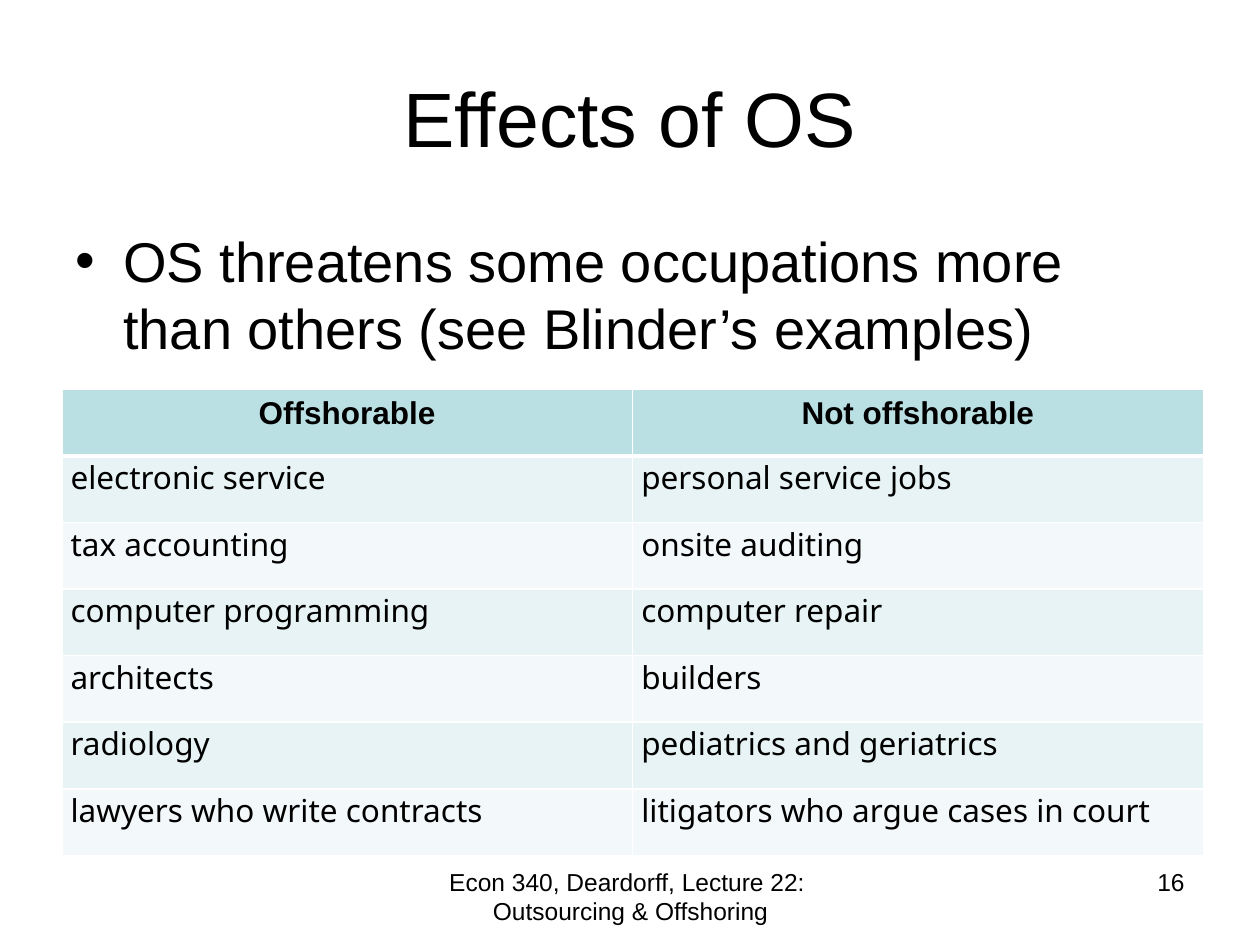
"""Build the slide on which occupations are offshorable."""
from lxml.etree import SubElement
from pptx import Presentation
from pptx.dml.color import RGBColor
from pptx.enum.text import MSO_ANCHOR as Anchor, PP_ALIGN as Align
from pptx.oxml.ns import qn
from pptx.util import Inches, Pt

TITLE = "Effects of OS"
POINT = "OS threatens some occupations more than others (see Blinder’s examples)"
FOOTER = "Econ 340, Deardorff, Lecture 22:  Outsourcing & Offshoring"
PAGE = "16"
JOBS = [
    ("Offshorable", "Not offshorable"),
    ("electronic service", "personal service jobs"),
    ("tax accounting", "onsite auditing"),
    ("computer programming", "computer repair"),
    ("architects", "builders"),
    ("radiology", "pediatrics and geriatrics"),
    ("lawyers who write contracts", "litigators who argue cases in court"),
]

BLACK = RGBColor(0x00, 0x00, 0x00)
HEADER = RGBColor(0xBB, 0xE0, 0xE3)
BANDS = RGBColor(0xF3, 0xF9, 0xFA), RGBColor(0xE7, 0xF3, 0xF4)
BORDER = "FFFFFF"

WIDTH, HEIGHT = Inches(10), Inches(7.5)
MARGIN = 0.5
FOOTER_TOP, FOOTER_HEIGHT = 6.83, 0.52
TABLE_BOX = 0.49, 3.09, 9.06, 3.7


def write(frame, text, size, align=Align.LEFT, font="Arial", bold=False):
    """Put one formatted run in the first paragraph and return the paragraph."""
    paragraph = frame.paragraphs[0]
    paragraph.alignment = align
    run = paragraph.add_run()
    run.text = text
    run.font.name, run.font.size, run.font.bold = font, Pt(size), bold
    run.font.color.rgb = BLACK
    return paragraph


def add_text(slide, box, text, size, align=Align.LEFT):
    """Add a wrapping text box and return its paragraph."""
    frame = slide.shapes.add_textbox(*map(Inches, box)).text_frame
    frame.word_wrap = True
    return write(frame, text, size, align)


def add_bullet(paragraph, indent):
    """Give the paragraph a hanging round bullet."""
    properties = paragraph._p.get_or_add_pPr()
    properties.set("marL", str(Inches(indent)))
    properties.set("indent", str(-Inches(indent)))
    before = SubElement(properties, qn("a:spcBef"))
    SubElement(before, qn("a:spcPct"), val="20000")
    SubElement(properties, qn("a:buFont"), typeface="Arial")
    SubElement(properties, qn("a:buChar"), char="•")


def set_borders(cell, widths):
    """Draw the cell's borders, given as points by side."""
    properties = cell._tc.get_or_add_tcPr()
    for position, (side, width) in enumerate(widths.items()):
        line = properties.makeelement(qn(f"a:ln{side}"), {"w": str(Pt(width))})
        fill = SubElement(line, qn("a:solidFill"))
        SubElement(fill, qn("a:srgbClr"), val=BORDER)
        properties.insert(position, line)


def add_jobs(slide):
    """Add the table of occupations."""
    left, top, width, height = map(Inches, TABLE_BOX)
    table = slide.shapes.add_table(
        len(JOBS), len(JOBS[0]), left, top, width, height).table
    for row, jobs in enumerate(JOBS):
        for column, job in enumerate(jobs):
            cell = table.cell(row, column)
            cell.fill.solid()
            if row == 0:
                cell.fill.fore_color.rgb = HEADER
                write(cell.text_frame, job, 18, Align.CENTER, bold=True)
            else:
                cell.fill.fore_color.rgb = BANDS[row % 2]
                cell.margin_left = cell.margin_right = Inches(0.07)
                cell.margin_top = cell.margin_bottom = 0
                write(cell.text_frame, job, 18, font="Noto Sans")
            set_borders(cell, {"L": 1, "R": 1, "T": 3 if row == 1 else 1,
                               "B": 3 if row == 0 else 1})


def main():
    """Build and save the slide."""
    deck = Presentation()
    deck.slide_width, deck.slide_height = WIDTH, HEIGHT
    slide = deck.slides.add_slide(deck.slide_layouts[5])

    title = slide.shapes.title
    title.left, title.top = Inches(MARGIN), Inches(0.3)
    title.width, title.height = Inches(9), Inches(1.25)
    title.text_frame.vertical_anchor = Anchor.MIDDLE
    write(title.text_frame, TITLE, 44, Align.CENTER)

    point = add_text(slide, (MARGIN, 1.75, 9, 4.95), POINT, 32)
    add_bullet(point, 0.38)
    add_text(slide, (3.42, FOOTER_TOP, 3.17, FOOTER_HEIGHT), FOOTER, 14, Align.CENTER)
    add_text(slide, (7.17, FOOTER_TOP, 2.33, FOOTER_HEIGHT), PAGE, 14, Align.RIGHT)
    add_jobs(slide)
    deck.save("out.pptx")


if __name__ == "__main__":
    main()
